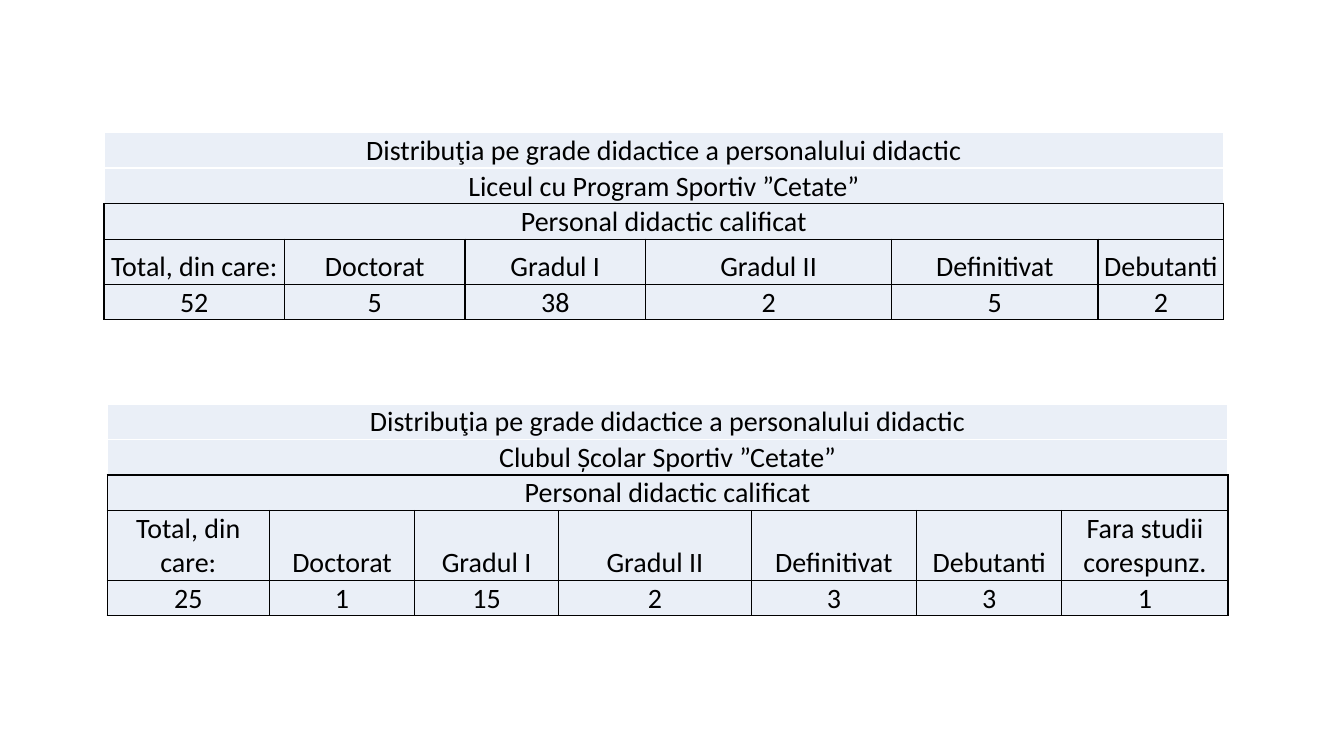
from dataclasses import dataclass

from lxml import etree
from pptx import Presentation
from pptx import util as u
from pptx.dml.color import RGBColor
from pptx.enum import text
from pptx.oxml import ns


@dataclass(frozen=True)
class Theme:
    font: str = "Calibri"
    size: int = 20
    ink: str = "000000"
    cell: str = "EAEFF7"
    title_border: str = "FFFFFF"
    grid_border: str = "000000"
    border_width: int = 1
    inset: float = 0.03


class StaffSlide:
    TITLE_ROWS = 2
    ROW_HEIGHT = 0.88

    def __init__(self, slide, theme):
        self.slide = slide
        self.theme = theme

    def borders(self, cell, colours):
        """Draw the cell's edges; colours run left, right, top, bottom."""
        properties = cell._tc.get_or_add_tcPr()
        for side, colour in zip("LRTB", colours):
            line = etree.SubElement(properties, ns.qn(f"a:ln{side}"),
                                    w=str(u.Pt(self.theme.border_width)))
            fill = etree.SubElement(line, ns.qn("a:solidFill"))
            etree.SubElement(fill, ns.qn("a:srgbClr"), val=colour)

    def style_cell(self, cell):
        theme = self.theme
        cell.fill.solid()
        cell.fill.fore_color.rgb = RGBColor.from_string(theme.cell)
        cell.vertical_anchor = text.MSO_ANCHOR.BOTTOM
        cell.margin_left = cell.margin_right = cell.margin_top = u.Cm(theme.inset)
        cell.margin_bottom = 0
        paragraph = cell.text_frame.paragraphs[0]
        paragraph.alignment = text.PP_ALIGN.CENTER
        for run in paragraph.runs:
            run.font.name = theme.font
            run.font.size = u.Pt(theme.size)
            run.font.color.rgb = RGBColor.from_string(theme.ink)

    def table(self, left, top, widths, heading_height, banners, headings, values):
        rows = [[banner] for banner in banners] + [headings, values]
        heights = [self.ROW_HEIGHT] * len(rows)
        heights[len(banners)] = heading_height
        frame = self.slide.shapes.add_table(
            len(rows), len(widths), u.Cm(left), u.Cm(top),
            u.Cm(sum(widths)), u.Cm(sum(heights)))
        table = frame.table
        table.first_row = table.horz_banding = False
        for column, width in zip(table.columns, widths):
            column.width = u.Cm(width)

        white, black = self.theme.title_border, self.theme.grid_border
        for index, (row, height) in enumerate(zip(rows, heights)):
            table.rows[index].height = u.Cm(height)
            # Title rows have white edges, down to the black grid
            edge = white if index < self.TITLE_ROWS else black
            bottom = white if index < self.TITLE_ROWS - 1 else black
            if len(row) == 1:
                table.cell(index, 0).merge(table.cell(index, len(widths) - 1))
            for column, content in enumerate(row):
                table.cell(index, column).text_frame.text = content
            for cell in table.rows[index].cells:
                self.borders(cell, (edge, edge, edge, bottom))
                self.style_cell(cell)


def main():
    presentation = Presentation()
    presentation.slide_width = u.Cm(33.87)
    presentation.slide_height = u.Cm(19.05)
    slide = presentation.slides.add_slide(presentation.slide_layouts[6])
    staff = StaffSlide(slide, Theme())

    title = "Distribuţia pe grade didactice a personalului didactic"
    group = "Personal didactic calificat"
    grades = ["Total, din care:", "Doctorat", "Gradul I", "Gradul II",
              "Definitivat", "Debutanti"]

    # High school
    staff.table(2.62, 3.34, [4.55, 4.55, 4.55, 6.2, 5.2, 3.17], 1.14,
                [title, "Liceul cu Program Sportiv ”Cetate”", group],
                grades, ["52", "5", "38", "2", "5", "2"])

    # Sports club
    staff.table(2.7, 10.18, [4.09, 3.66, 3.63, 4.85, 4.17, 3.66, 4.19], 1.74,
                [title, "Clubul Școlar Sportiv ”Cetate”", group],
                grades + ["Fara studii corespunz."],
                ["25", "1", "15", "2", "3", "3", "1"])

    presentation.save("out.pptx")


if __name__ == "__main__":
    main()
